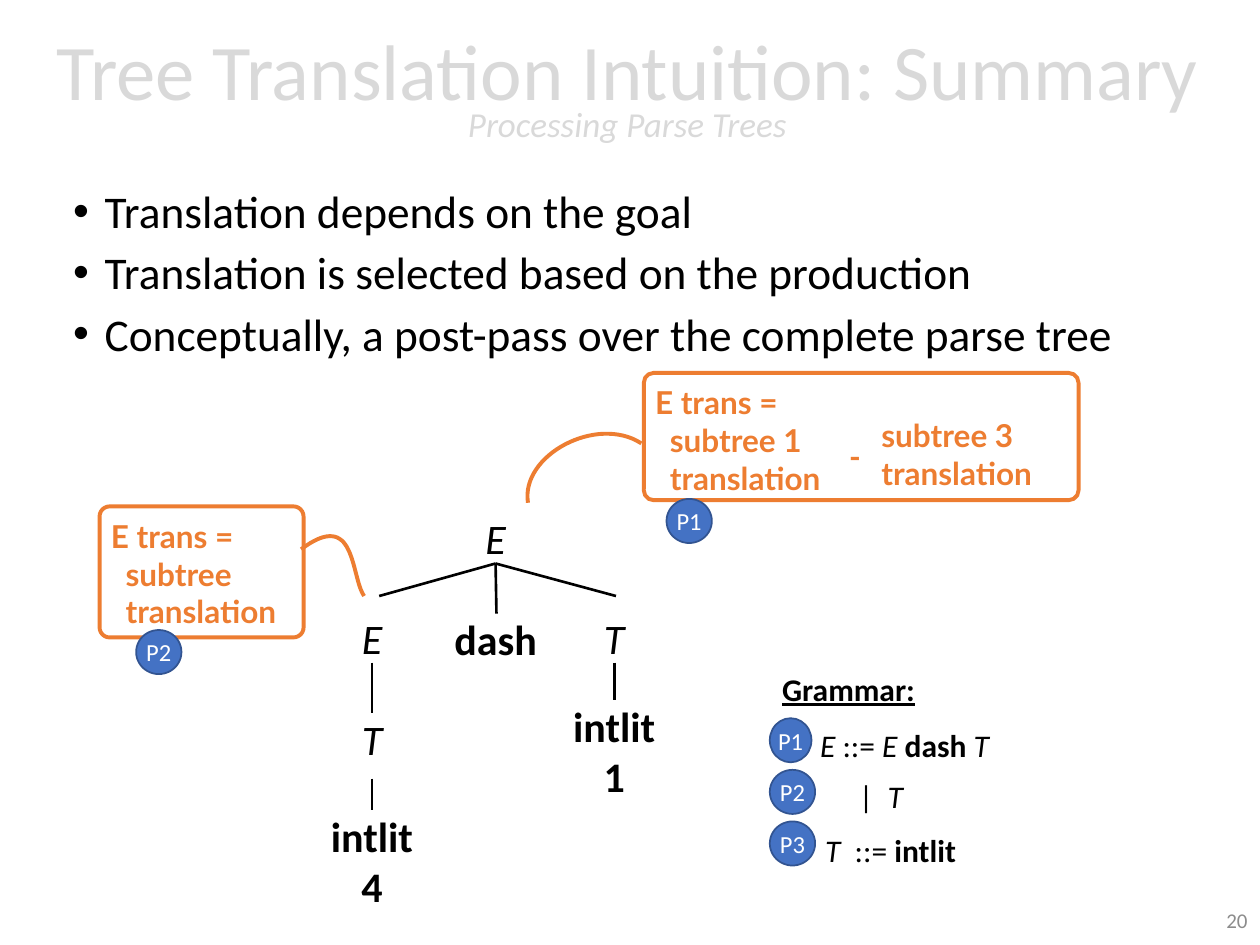
from dataclasses import dataclass
from lxml.etree import SubElement
from pptx import Presentation
from pptx.dml.color import RGBColor as RGB
from pptx.enum.shapes import MSO_CONNECTOR as CONN, MSO_SHAPE as SHAPE
from pptx.enum.text import MSO_ANCHOR as ANCHOR, MSO_AUTO_SIZE as FIT, PP_ALIGN as ALIGN
from pptx.oxml.ns import qn
from pptx.util import Pt


@dataclass(frozen=True)
class Theme:
    font: str = "Calibri"
    note_font: str = "Lato"
    ink: RGB = RGB(0, 0, 0)
    white: RGB = RGB(255, 255, 255)
    title: RGB = RGB.from_string("D9D9D9")
    number: RGB = RGB.from_string("8C8C8C")
    orange: RGB = RGB.from_string("ED7D31")
    blue: RGB = RGB.from_string("4472C4")
    blue_edge: RGB = RGB.from_string("325491")
    title_size: float = 45
    subtitle_size: float = 20
    body_size: float = 25.9
    tree_size: float = 24
    text_size: float = 18
    badge_size: float = 14
    number_size: float = 12


T = Theme()


def style(r, size, color, font=T.font, marks=""):
    f = r.font
    f.name, f.size, f.color.rgb = font, Pt(size), color
    f.bold, f.italic, f.underline = "b" in marks, "i" in marks, "u" in marks


def add_text(x, y, w, h, lines, size, color=T.ink, font=T.font, align=ALIGN.LEFT, inset=3.6, indent=0):
    tf = s.shapes.add_textbox(Pt(x), Pt(y), Pt(w), Pt(h)).text_frame
    tf.word_wrap = False
    tf.margin_top = tf.margin_bottom = Pt(inset)
    for i, runs in enumerate(lines):
        p = tf.paragraphs[0] if i == 0 else tf.add_paragraph()
        p.alignment = align
        if i and indent:
            p._p.get_or_add_pPr().set("marL", str(Pt(indent)))
        for text, marks in runs:
            r = p.add_run()
            r.text = text
            style(r, size, color, font, marks)
    return tf


prs = Presentation()
prs.slide_width, prs.slide_height = Pt(720), Pt(540)
s = prs.slides.add_slide(prs.slide_layouts[1])

title, body = s.shapes.title, s.placeholders[1]
title.left, title.top, title.width, title.height = Pt(14.4), Pt(2.2), Pt(688.3), Pt(104.4)
tf = title.text_frame
tf.text = "Tree Translation Intuition: Summary\vProcessing Parse Trees"
tf.auto_size, tf.vertical_anchor = FIT.NONE, ANCHOR.MIDDLE
p = tf.paragraphs[0]
p.alignment, p.line_spacing = ALIGN.CENTER, 0.7
style(p.runs[0], T.title_size, T.title)
style(p.runs[1], T.subtitle_size, T.title, marks="i")

body.left, body.top, body.width, body.height = Pt(34.6), Pt(107.3), Pt(653), Pt(109.4)
tf = body.text_frame
tf.text = "\n".join([
    "Translation depends on the goal",
    "Translation is selected based on the production",
    "Conceptually, a post-pass over the complete parse tree",
])
tf.auto_size = FIT.NONE
for p in tf.paragraphs:
    p.line_spacing, p.space_before = 0.8, Pt(10)
    pPr = p._p.get_or_add_pPr()
    pPr.set("marL", str(Pt(18)))
    pPr.set("indent", str(Pt(-18)))
    style(p.runs[0], T.body_size, T.ink)

tf = add_text(558, 511.2, 162, 28.8, [[("20", "")]], T.number_size, T.number, align=ALIGN.RIGHT)
tf.word_wrap, tf.vertical_anchor = True, ANCHOR.MIDDLE

left, middle, right = 212.6, 283.2, 351
for cx, y, w, words, marks in [
    (middle, 293, 26.6, ["E"], "i"),
    (left, 350, 26.6, ["E"], "i"),
    (middle, 350.6, 62, ["dash"], "b"),
    (right, 350, 26.6, ["T"], "i"),
    (left, 407.5, 26.6, ["T"], "i"),
    (left, 463, 62, ["intlit", "4"], "b"),
    (right, 400.3, 62, ["intlit", "1"], "b"),
]:
    add_text(cx - w / 2, y, w, 29 * len(words), [[(word, marks)] for word in words],
             T.tree_size, align=ALIGN.CENTER, inset=0)

for x1, y1, x2, y2 in [
    (middle, 322, 216.7, 340.6),
    (middle, 322, middle + 0.5, 350.6),
    (middle, 322, 352, 340.6),
    (left, 378.7, left, 407.5),
    (left, 445, left, 463),
    (right, 378.7, right, 400.3),
]:
    line = s.shapes.add_connector(CONN.STRAIGHT, Pt(x1), Pt(y1), Pt(x2), Pt(y2))
    line.line.color.rgb, line.line.width = T.ink, Pt(1.5)
    SubElement(line._element.spPr, qn("a:effectLst"))

for x, y, w, h, lines in [
    (367.9, 213.1, 248.4, 72.7, ["E trans =", "subtree 1", "translation"]),
    (56.9, 289.4, 116.6, 74.9, ["E trans =", "subtree", "translation"]),
]:
    box = s.shapes.add_shape(SHAPE.ROUNDED_RECTANGLE, Pt(x), Pt(y), Pt(w), Pt(h))
    box.adjustments[0] = 0.077
    box.shadow.inherit = False
    box.fill.background()
    box.line.color.rgb, box.line.width = T.orange, Pt(2.25)
    add_text(x - 0.7, y + 2.4, 121.7, 72.7, [[(text, "b")] for text in lines],
             T.text_size, T.orange, T.note_font, indent=8.5)

add_text(496.6, 234, 113, 51, [[("subtree 3", "b")], [("translation", "b")]],
         T.text_size, T.orange, T.note_font)
add_text(478.1, 246.2, 23, 28.8, [[("-", "b")]], T.text_size, T.orange, T.note_font)

steps = 32
for curve in [
    [(366.5, 253.4), (341.3, 236.9), (297.4, 259.9), (301.7, 287.3)],
    [(172.1, 313.9), (203.8, 290.2), (200.2, 329), (208.1, 340.6)],
]:
    points = []
    for i in range(steps + 1):
        t = i / steps
        weights = [(1 - t) ** 3, 3 * t * (1 - t) ** 2, 3 * t * t * (1 - t), t ** 3]
        points.append([Pt(sum(k * v for k, v in zip(weights, axis))) for axis in zip(*curve)])
    fb = s.shapes.build_freeform(*points[0])
    fb.add_line_segments(points[1:], close=False)
    sp = fb.convert_to_shape()
    sp.shadow.inherit = False
    sp.fill.background()
    sp.line.color.rgb, sp.line.width = T.orange, Pt(2.25)

add_text(439.9, 379.4, 91.4, 28.8, [[("Grammar:", "bu")]], T.text_size)
for x, y, w, runs in [
    (461.5, 411.1, 116.6, [("E ", "i"), ("::=", ""), (" E ", "i"), ("dash", "b"), (" T", "i")]),
    (483.8, 440.6, 40.3, [("|", ""), ("  T", "i")]),
    (464.4, 471.6, 90, [("T  ", "i"), ("::= ", ""), ("intlit", "b")]),
]:
    add_text(x, y, w, 28.8, [runs], T.text_size)

for label, x, y, w in [
    ("P1", 439.9, 410.4, 23.8),
    ("P2", 439.9, 439.9, 25.9),
    ("P3", 439.9, 469.4, 25.9),
    ("P2", 77.8, 360, 25.9),
    ("P1", 380.9, 285.1, 25.9),
]:
    sp = s.shapes.add_shape(SHAPE.OVAL, Pt(x), Pt(y), Pt(w), Pt(25.2))
    sp.shadow.inherit = False
    sp.fill.solid()
    sp.fill.fore_color.rgb = T.blue
    sp.line.color.rgb, sp.line.width = T.blue_edge, Pt(1)
    tf = sp.text_frame
    tf.margin_left = tf.margin_right = tf.margin_top = tf.margin_bottom = 0
    tf.vertical_anchor = ANCHOR.MIDDLE
    tf.text = label
    tf.paragraphs[0].alignment = ALIGN.CENTER
    style(tf.paragraphs[0].runs[0], T.badge_size, T.white)

prs.save("out.pptx")
